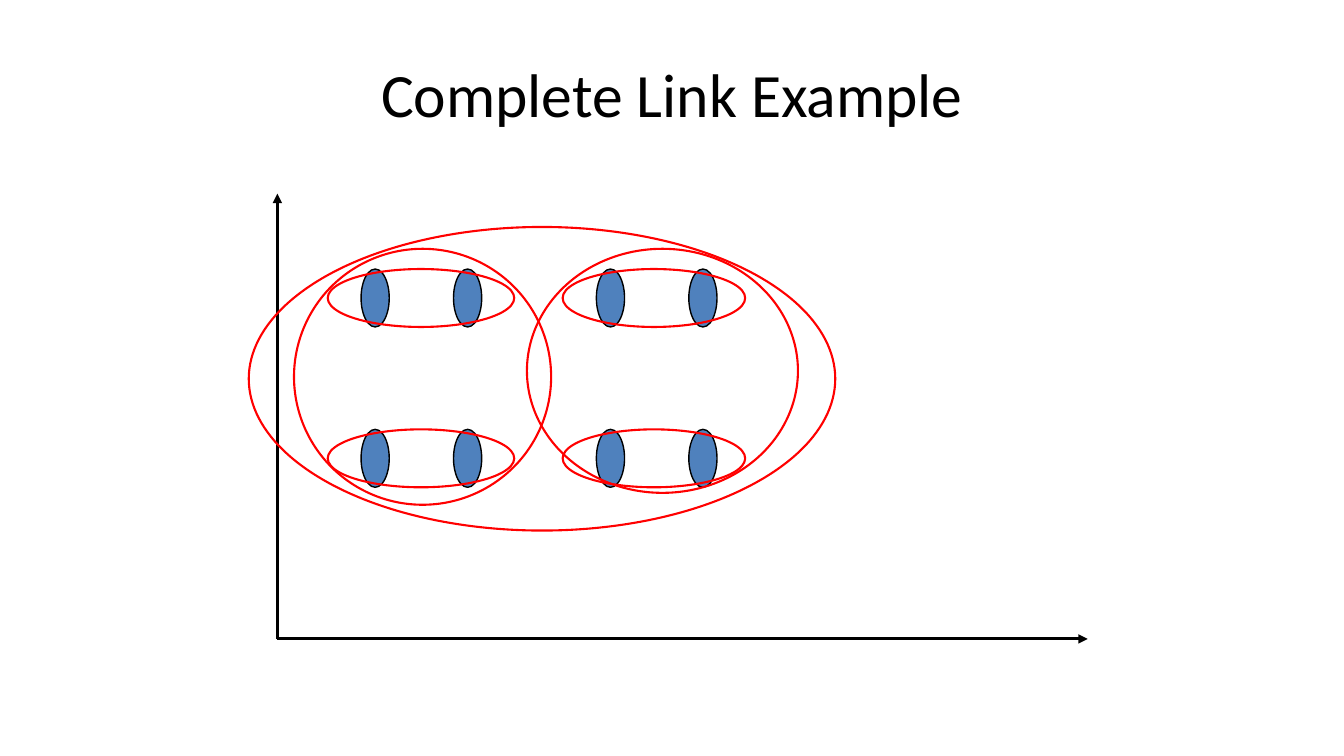
from dataclasses import dataclass
from itertools import product
from typing import Optional

from lxml import etree
from pptx import Presentation
from pptx.dml.color import RGBColor
from pptx.enum import shapes, text
from pptx.oxml import ns
from pptx.util import Cm, Pt


@dataclass(frozen=True)
class Theme:
    font: str = "Calibri"
    title_size: float = 44
    ink: str = "000000"
    point_fill: str = "4F81BD"
    cluster_line: str = "FF0000"
    axis_width: float = 2.25
    point_width: float = 1
    cluster_width: float = 1.5


@dataclass(frozen=True)
class Ellipse:
    """An ellipse measured in centimetres."""
    left: float
    top: float
    width: float
    height: float


@dataclass(frozen=True)
class Axis:
    """An arrow from the origin to its end, in centimetres."""
    end_x: float
    end_y: float


THEME = Theme()
ORIGIN_X, ORIGIN_Y = 6.99, 16.1
AXES = [Axis(ORIGIN_X, 4.88), Axis(27.41, ORIGIN_Y)]

ROW_TOPS = [6.78, 10.82]
GROUP_LEFTS = [9.1, 15.03]
POINT_GAP = 2.33
POINT_WIDTH, POINT_HEIGHT = 0.71, 1.46
POINTS = [
    Ellipse(left + step * POINT_GAP, top, POINT_WIDTH, POINT_HEIGHT)
    for left, top, step in product(GROUP_LEFTS, ROW_TOPS, range(2))
]

PAIR_SPANS = [(8.26, 4.7), (14.18, 4.6)]
PAIRS = [
    Ellipse(left, top, width, POINT_HEIGHT)
    for (left, width), top in product(PAIR_SPANS, ROW_TOPS)
]
HALVES = [Ellipse(7.41, 6.27, 6.48, 6.45), Ellipse(13.28, 6.27, 6.83, 6.15)]
WHOLE = Ellipse(6.27, 5.72, 14.78, 7.65)


def add_title(slide, wording: str) -> None:
    title = slide.shapes.title
    title.left, title.top, title.width, title.height = Cm(1.7), Cm(0.76), Cm(30.48), Cm(3.18)
    frame = title.text_frame
    frame.text = wording
    frame.vertical_anchor = text.MSO_ANCHOR.MIDDLE
    heading = frame.paragraphs[0]
    heading.alignment = text.PP_ALIGN.CENTER
    heading.font.name = THEME.font
    heading.font.size = Pt(THEME.title_size)
    heading.font.color.rgb = RGBColor.from_string(THEME.ink)


def add_axis(slide, axis: Axis) -> None:
    arrow = slide.shapes.add_connector(
        shapes.MSO_CONNECTOR.STRAIGHT,
        Cm(ORIGIN_X), Cm(ORIGIN_Y), Cm(axis.end_x), Cm(axis.end_y),
    )
    arrow.line.color.rgb = RGBColor.from_string(THEME.ink)
    arrow.line.width = Pt(THEME.axis_width)
    etree.SubElement(arrow.line._get_or_add_ln(), ns.qn("a:tailEnd"), type="triangle")
    etree.SubElement(arrow._element.spPr, ns.qn("a:effectLst"))


def add_ellipse(slide, ellipse: Ellipse, line: str, line_width: float,
                fill: Optional[str] = None) -> None:
    oval = slide.shapes.add_shape(
        shapes.MSO_SHAPE.OVAL,
        Cm(ellipse.left), Cm(ellipse.top), Cm(ellipse.width), Cm(ellipse.height),
    )
    oval.shadow.inherit = False
    oval.line.color.rgb = RGBColor.from_string(line)
    oval.line.width = Pt(line_width)
    if fill:
        oval.fill.solid()
        oval.fill.fore_color.rgb = RGBColor.from_string(fill)
    else:
        oval.fill.background()


def main() -> None:
    deck = Presentation()
    deck.slide_width, deck.slide_height = Cm(33.87), Cm(19.05)
    slide = deck.slides.add_slide(deck.slide_layouts.get_by_name("Title Only"))

    add_title(slide, "Complete Link Example")
    for axis in AXES:
        add_axis(slide, axis)
    for point in POINTS:
        add_ellipse(slide, point, THEME.ink, THEME.point_width, THEME.point_fill)
    for cluster in [*PAIRS, *HALVES, WHOLE]:
        add_ellipse(slide, cluster, THEME.cluster_line, THEME.cluster_width)

    deck.save("out.pptx")


if __name__ == "__main__":
    main()
